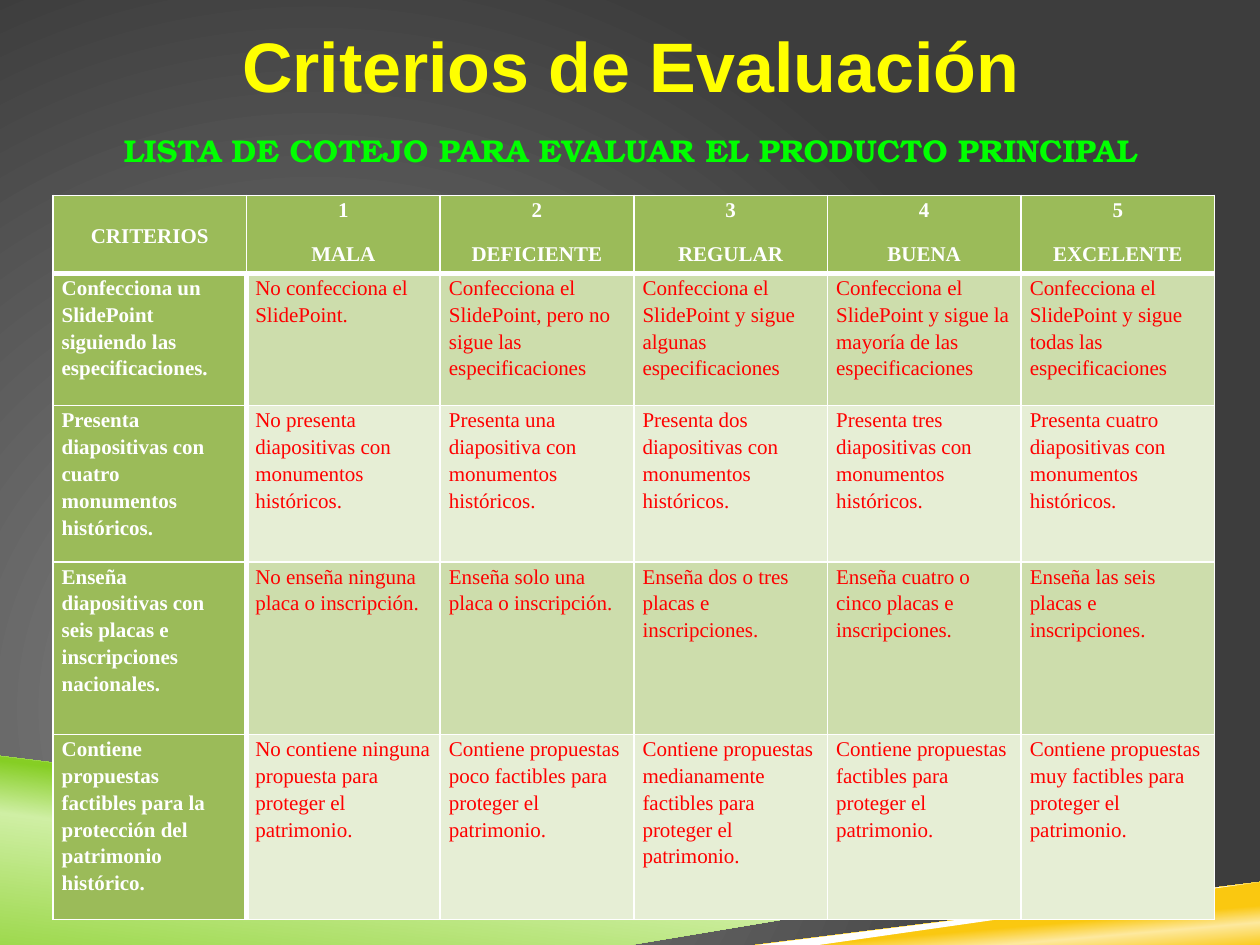
from dataclasses import dataclass

from lxml.etree import SubElement
from pptx import Presentation
from pptx.dml.color import RGBColor
from pptx.enum.text import MSO_ANCHOR as Anchor, PP_ALIGN as Align
from pptx.oxml.ns import qn
from pptx.util import Inches, Pt

Stops = list[tuple[int, str]]
Point = tuple[float, float]

WHITE, RED = "FFFFFF", "FF0000"
HEADER_GREEN = "9BBB59"
BAND_GREENS = ("CDDDAC", "E6EED5")


@dataclass
class Ribbon:
    points: list[Point]
    stops: Stops | None = None
    angle: int = 0


@dataclass
class Heading:
    text: str
    top: float
    height: float
    size: int
    font: str
    color: str


RIBBONS = [
    Ribbon([(0, 5.97), (7.92, 6.92), (2, 7.5), (0, 7.5)],
           [(0, "86CE24"), (52, "CFEFA4"), (66, "86CE24")], 277),
    Ribbon([(1.98, 7.5), (10, 6.72), (10, 7.5)],
           [(28, "FAC810"), (40, "FDE99F"), (48, "FAC810")], 265),
    Ribbon([(0, 5.92), (0, 6), (7.9, 6.93), (8.32, 6.9)]),
    Ribbon([(10, 6.69), (1.84, 7.5), (2.66, 7.5), (10, 6.77)]),
]

SUBTITLE = Heading("LISTA DE COTEJO PARA EVALUAR EL PRODUCTO PRINCIPAL",
                   0.99, 0.4, 18, "TeX Gyre Bonum", "00FF00")
TITLE = Heading("Criterios de Evaluación", 0.13, 0.77, 40, "Arial", "FFFF00")

ROW_HEIGHTS = [0.62, 1.05, 1.24, 1.37, 1.47]
COLUMN_WIDTH = 9.22 / 6
RUBRIC = [
    ["CRITERIOS", "1\nMALA", "2\nDEFICIENTE", "3\nREGULAR", "4\nBUENA",
     "5\nEXCELENTE"],
    ["Confecciona un SlidePoint siguiendo las especificaciones.",
     "No confecciona el SlidePoint.",
     "Confecciona el SlidePoint, pero no sigue las especificaciones",
     "Confecciona el SlidePoint y sigue algunas especificaciones",
     "Confecciona el SlidePoint y sigue la mayoría de las especificaciones",
     "Confecciona el SlidePoint y sigue todas las especificaciones"],
    ["Presenta diapositivas con cuatro monumentos históricos.",
     "No presenta diapositivas con monumentos históricos.",
     "Presenta una diapositiva con monumentos históricos.",
     "Presenta dos diapositivas con monumentos históricos.",
     "Presenta tres diapositivas con monumentos históricos.",
     "Presenta cuatro diapositivas con monumentos históricos."],
    ["Enseña diapositivas con seis placas e inscripciones nacionales.",
     "No enseña ninguna placa o inscripción.",
     "Enseña solo una placa o inscripción.",
     "Enseña dos o tres placas e inscripciones.",
     "Enseña cuatro o cinco placas e inscripciones.",
     "Enseña las seis placas e inscripciones."],
    ["Contiene propuestas factibles para la protección del patrimonio histórico.",
     "No contiene ninguna propuesta para proteger el patrimonio.",
     "Contiene propuestas poco factibles para proteger el patrimonio.",
     "Contiene propuestas medianamente factibles para proteger el patrimonio.",
     "Contiene propuestas factibles para proteger el patrimonio.",
     "Contiene propuestas muy factibles para proteger el patrimonio."],
]


def rgb(color: str) -> RGBColor:
    return RGBColor.from_string(color)


def paint(fill, color: str) -> None:
    fill.solid()
    fill.fore_color.rgb = rgb(color)


def paint_gradient(fill, owner, stops: Stops):
    """Give the fill these stops and return its element, without direction."""
    fill.gradient()
    gradient = owner.find(".//" + qn("a:gradFill"))
    for child in list(gradient):
        gradient.remove(child)
    stop_list = SubElement(gradient, qn("a:gsLst"))
    for position, color in stops:
        stop = SubElement(stop_list, qn("a:gs"), pos=str(position * 1000))
        SubElement(stop, qn("a:srgbClr"), val=color)
    return gradient


def style_text(paragraph, size: int, font: str, color: str, bold: bool) -> None:
    for run in paragraph.runs:
        run.font.size = Pt(size)
        run.font.name = font
        run.font.bold = bold
        run.font.color.rgb = rgb(color)


def draw_background(slide) -> None:
    gradient = paint_gradient(slide.background.fill, slide._element,
                              [(0, "878787"), (100, "3D3D3D")])
    circle = SubElement(gradient, qn("a:path"), path="circle")
    SubElement(circle, qn("a:fillToRect"),
               l="50000", t="100000", r="100000", b="50000")


def draw_ribbon(slide, ribbon: Ribbon) -> None:
    start, *others = ribbon.points
    builder = slide.shapes.build_freeform(*start, scale=Inches(1))
    builder.add_line_segments(others, close=True)
    shape = builder.convert_to_shape()
    shape.shadow.inherit = False
    shape.line.fill.background()
    if ribbon.stops:
        gradient = paint_gradient(shape.fill, shape._element, ribbon.stops)
        SubElement(gradient, qn("a:lin"),
                   ang=str(ribbon.angle * 60000), scaled="0")
    else:
        paint(shape.fill, WHITE)


def draw_heading(slide, heading: Heading) -> None:
    box = slide.shapes.add_textbox(Inches(0.28), Inches(heading.top),
                                   Inches(9.45), Inches(heading.height))
    frame = box.text_frame
    frame.word_wrap = True
    frame.vertical_anchor = Anchor.MIDDLE
    frame.text = heading.text
    line = frame.paragraphs[0]
    line.alignment = Align.CENTER
    style_text(line, heading.size, heading.font, heading.color, True)


def draw_borders(cell, row: int, column: int) -> None:
    """White grid, thicker below the header and beside the criteria."""
    last_row = len(RUBRIC) - 1
    widths = {
        "L": 3 if column == 1 and row else 1,
        "R": 3 if column == 0 and row else 1,
        "T": 3 if row == 1 else 1,
        "B": 3 if row == 0 else 1,
    }
    if (row, column) == (last_row, 0):
        del widths["B"]
    properties = cell._tc.get_or_add_tcPr()
    for side, width in widths.items():
        border = SubElement(properties, qn(f"a:ln{side}"), w=str(Pt(width)))
        solid = SubElement(border, qn("a:solidFill"))
        SubElement(solid, qn("a:srgbClr"), val=WHITE)


def fill_cell(cell, text: str, row: int, column: int) -> None:
    is_header = row == 0
    is_label = is_header or column == 0
    cell.margin_left = cell.margin_right = Inches(0.07)
    cell.margin_top = cell.margin_bottom = 0
    cell.vertical_anchor = Anchor.MIDDLE if is_header and column == 0 else Anchor.TOP
    draw_borders(cell, row, column)
    paint(cell.fill, HEADER_GREEN if is_label else BAND_GREENS[(row - 1) % 2])
    cell.text_frame.text = text
    for paragraph in cell.text_frame.paragraphs:
        paragraph.alignment = Align.CENTER if is_header else Align.LEFT
        paragraph.line_spacing = 1.15
        paragraph.space_after = Pt(10)
        style_text(paragraph, 12, "Times New Roman",
                   WHITE if is_label else RED, is_label)


def draw_rubric(slide) -> None:
    table = slide.shapes.add_table(
        len(RUBRIC), len(RUBRIC[0]), Inches(0.42), Inches(1.55),
        Inches(9.22), Inches(sum(ROW_HEIGHTS))).table
    for column in table.columns:
        column.width = Inches(COLUMN_WIDTH)
    for row, texts in enumerate(RUBRIC):
        table.rows[row].height = Inches(ROW_HEIGHTS[row])
        for column, text in enumerate(texts):
            fill_cell(table.cell(row, column), text, row, column)


def main() -> None:
    deck = Presentation()
    deck.slide_width, deck.slide_height = Inches(10), Inches(7.5)
    slide = deck.slides.add_slide(deck.slide_layouts[6])

    # Backdrop
    draw_background(slide)
    for ribbon in RIBBONS:
        draw_ribbon(slide, ribbon)

    # Headings and evaluation table
    draw_heading(slide, SUBTITLE)
    draw_rubric(slide)
    draw_heading(slide, TITLE)

    deck.save("out.pptx")


if __name__ == "__main__":
    main()
